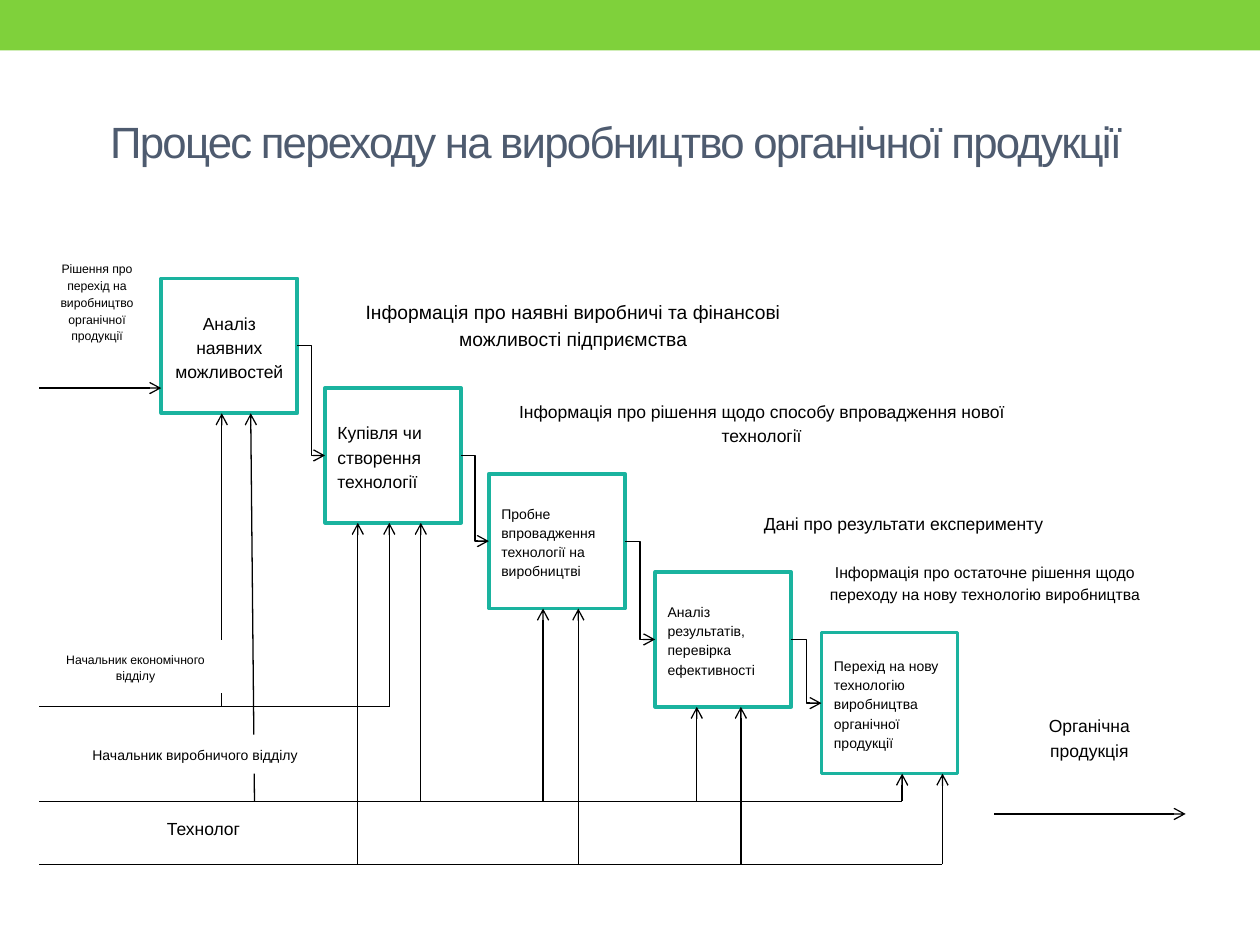
from lxml import etree
from pptx import Presentation
from pptx.dml.color import RGBColor
from pptx.enum.shapes import MSO_CONNECTOR, MSO_SHAPE
from pptx.enum.text import MSO_ANCHOR, PP_ALIGN
from pptx.oxml.ns import qn
from pptx.util import Inches, Pt

RECT = MSO_SHAPE.RECTANGLE
STRAIGHT, ELBOW = MSO_CONNECTOR.STRAIGHT, MSO_CONNECTOR.ELBOW
LEFT, CENTER = PP_ALIGN.LEFT, PP_ALIGN.CENTER
RIGHT_SIDE, LEFT_SIDE = 3, 1

prs = Presentation()
prs.slide_width, prs.slide_height = Inches(10), Inches(7.5)
slide = prs.slides.add_slide(prs.slide_layouts[6])
color = RGBColor.from_string


def add_box(text, left, top, width, height, size=10, align=CENTER,
            fill="FFFFFF", border=None):
    box = slide.shapes.add_shape(RECT, Inches(left), Inches(top), Inches(width), Inches(height))
    box.shadow.inherit = False
    box.fill.solid()
    box.fill.fore_color.rgb = color(fill)
    if border:
        box.line.color.rgb = color(border)
        box.line.width = Pt(2.08)
    else:
        box.line.fill.background()
    if text:
        frame = box.text_frame
        frame.word_wrap = True
        frame.vertical_anchor = MSO_ANCHOR.MIDDLE
        paragraph = frame.paragraphs[0]
        paragraph.text = text
        paragraph.alignment = align
        paragraph.line_spacing = 1.15
        paragraph.space_after = Pt(10)
        font = paragraph.runs[0].font
        font.name, font.size = "Arial", Pt(size)
        font.color.rgb = color("000000")
    return box


def add_line(x1, y1, x2, y2, arrow=False, kind=STRAIGHT):
    line = slide.shapes.add_connector(kind, Inches(x1), Inches(y1), Inches(x2), Inches(y2))
    line.line.color.rgb = color("000000")
    line.line.width = Pt(0.75)
    if arrow:
        etree.SubElement(line.line._get_or_add_ln(), qn("a:tailEnd"), type="arrow")
    etree.SubElement(line._element.spPr, qn("a:effectLst"))
    return line


# Top band and title
add_box("", 0, 0, 10, 0.4, fill="7FD13B")
title = slide.shapes.add_textbox(Inches(0.28), Inches(0.58), Inches(9.22), Inches(1.08))
title.text_frame.word_wrap = True
title.text_frame.vertical_anchor = MSO_ANCHOR.MIDDLE
heading = title.text_frame.paragraphs[0]
heading.text = "Процес переходу на виробництво органічної продукції"
heading.alignment = CENTER
heading_font = heading.runs[0].font
heading_font.name, heading_font.size = "Arial", Pt(25)
heading_font.color.rgb = color("4E5B6F")
heading.runs[0]._r.get_or_add_rPr().set("spc", "-100")

# Process steps, descending from left to right
steps = [
    ("Аналіз наявних можливостей", 1.28, 2.21, 1.07, 10, CENTER),
    ("Купівля чи створення технології", 2.58, 3.08, 1.07, 10, LEFT),
    ("Пробне впровадження технології на виробництві", 3.88, 3.76, 1.07, 8, LEFT),
    ("Аналіз результатів, перевірка ефективності", 5.2, 4.54, 1.07, 8, LEFT),
    ("Перехід на нову технологію виробництва органічної продукції", 6.52, 5.02, 1.12, 8, LEFT),
]
step_boxes = [add_box(text, left, top, 1.08, height, size, align, border="1AB39F")
              for text, left, top, height, size, align in steps]
bottoms = [top + height for _, _, top, height, _, _ in steps]

for current, following in zip(step_boxes, step_boxes[1:]):
    link = add_line(0, 0, 1, 1, arrow=True, kind=ELBOW)
    link.begin_connect(current, RIGHT_SIDE)
    link.end_connect(following, LEFT_SIDE)

# Each role: label, its box and size, bus height, and (bus x, arrow x, step) branches
roles = [
    ("Начальник економічного відділу", (0.38, 5.08, 1.39, 0.42), 7, 5.61,
     [(1.76, 1.76, 0), (3.09, 3.09, 1)]),
    ("Начальник виробничого відділу", (0.38, 5.83, 2.34, 0.31), 8, 6.36,
     [(2.02, 1.99, 0), (3.34, 3.34, 1), (4.31, 4.31, 2), (5.53, 5.53, 3), (7.16, 7.16, 4)]),
    ("Технолог", (0.38, 6.37, 2.47, 0.39), 10, 6.86,
     [(2.84, 2.84, 1), (4.59, 4.59, 2), (5.88, 5.88, 3), (7.48, 7.48, 4)]),
]
for role, place, size, bus_y, branches in roles:
    # The first branch of the two managers runs behind the role label
    if role == "Технолог":
        add_box(role, *place, size)
    bus_x = 0.31
    for branch_x, arrow_x, step in branches:
        add_line(bus_x, bus_y, branch_x, bus_y)
        add_line(branch_x, bus_y, arrow_x, bottoms[step], arrow=True)
        bus_x = branch_x
    if role != "Технолог":
        add_box(role, *place, size)

# Process input and output
add_line(0.31, 3.08, 1.28, 3.08, arrow=True)
add_line(7.89, 6.46, 9.41, 6.46, arrow=True)

# Input, output and information labels
labels = [
    ("Рішення про перехід на виробництво органічної продукції", 0.38, 1.85, 0.78, 1.08, 7),
    ("Органічна продукція", 7.97, 5.33, 1.35, 1.03, 10),
    ("Інформація про наявні виробничі та фінансові можливості підприємства",
     2.58, 2.21, 3.94, 0.72, 11),
    ("Інформація про рішення щодо способу впровадження нової технології",
     3.96, 3.08, 4.17, 0.54, 10),
    ("Дані про результати експерименту", 5.2, 3.9, 3.94, 0.49, 10),
    ("Інформація про остаточне рішення щодо переходу на нову технологію виробництва",
     6.42, 4.3, 2.79, 0.63, 9),
]
for label in labels:
    add_box(*label)

prs.save("out.pptx")
